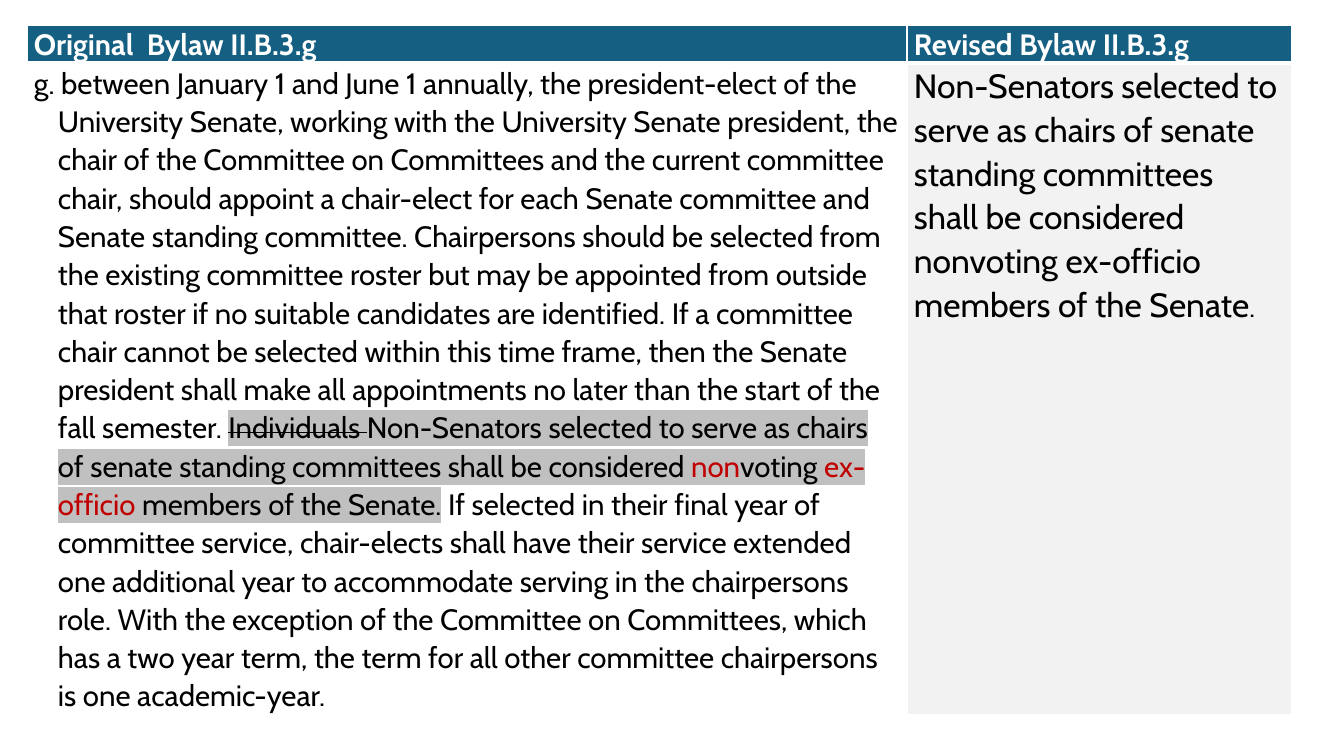
from dataclasses import dataclass

from lxml.etree import SubElement
from pptx import Presentation
from pptx.dml.color import RGBColor as RGB
from pptx.oxml.ns import qn
from pptx.util import Pt

HEADINGS = ["Original  Bylaw II.B.3.g", "Revised Bylaw II.B.3.g"]

# Each run: wording, then its own formatting
ORIGINAL_BYLAW = [
    ("g. between January 1 and June 1 annually, the president-elect of the University Senate, "
     "working with the University Senate president, the chair of the Committee on Committees "
     "and the current committee chair, should appoint a chair-elect for each Senate committee "
     "and Senate standing committee. Chairpersons should be selected from the existing committee "
     "roster but may be appointed from outside that roster if no suitable candidates are "
     "identified. If a committee chair cannot be selected within this time frame, then the "
     "Senate president shall make all appointments no later than the start of the fall "
     "semester. ", {}),
    ("Individuals ", {"marked": True, "struck": True}),
    ("Non-Senators selected to serve as chairs of senate standing committees shall be "
     "considered ", {"marked": True}),
    ("non", {"marked": True, "changed": True}),
    ("voting ", {"marked": True}),
    ("ex-officio", {"marked": True, "changed": True}),
    (" members of the Senate.", {"marked": True}),
    (" If selected in their final year of committee service, chair-elects shall have their "
     "service extended one additional year to accommodate serving in the chairpersons role. "
     "With the exception of the Committee on Committees, which has a two year term, the term "
     "for all other committee chairpersons is one academic-year.", {}),
]
REVISED_BYLAW = [
    ("Non-Senators selected to serve as chairs of senate standing committees shall be "
     "considered nonvoting ex-officio members of the Senate", {}),
    (".", {"size": 20}),
]


@dataclass(frozen=True)
class Theme:
    font: str = "Cabin"
    text_size: int = 21
    revised_size: int = 24
    line_spacing: float = 1.07
    header: str = "156082"
    revised: str = "F2F2F2"
    white: str = "FFFFFF"
    black: str = "000000"
    changed: str = "C00000"
    marked: str = "C0C0C0"


THEME = Theme()
PX = 9071  # EMU in one px
SLIDE_SIZE = (1344, 756)
TABLE_LEFT, TABLE_TOP = 27, 25
COLUMN_WIDTHS = [880, 385]
ROW_HEIGHTS = [38, 651]
SIDE_MARGIN = 7
HANGING_INDENT = 24


def px(length):
    return length * PX


def add_color(parent, color):
    SubElement(parent, qn("a:srgbClr"), val=color)


def set_borders(cell, bottom_width):
    properties = cell._tc.get_or_add_tcPr()
    for side, width in (("L", 1), ("R", 1), ("T", 1), ("B", bottom_width)):
        line = SubElement(properties, qn(f"a:ln{side}"), w=str(Pt(width)))
        add_color(SubElement(line, qn("a:solidFill")), THEME.white)


def add_run(paragraph, wording, color, marked=False, struck=False, changed=False, size=None):
    run = paragraph.add_run()
    run.text = wording
    run.font.color.rgb = RGB.from_string(THEME.changed if changed else color)
    if size:
        run.font.size = Pt(size)
    properties = run._r.get_or_add_rPr()
    if struck:
        properties.set("strike", "sngStrike")
    if marked:
        add_color(SubElement(properties, qn("a:highlight")), THEME.marked)


def fill_cell(cell, runs, size, color, background=None, bold=False, bottom_width=1):
    cell.margin_left = cell.margin_right = px(SIDE_MARGIN)
    cell.margin_top = cell.margin_bottom = 0
    set_borders(cell, bottom_width)
    if background:
        cell.fill.solid()
        cell.fill.fore_color.rgb = RGB.from_string(background)
    else:
        cell.fill.background()
    paragraph = cell.text_frame.paragraphs[0]
    paragraph.line_spacing = THEME.line_spacing
    paragraph.font.name = THEME.font
    paragraph.font.size = Pt(size)
    paragraph.font.bold = bold
    for wording, formatting in runs:
        add_run(paragraph, wording, color, **formatting)
    return paragraph


def main():
    deck = Presentation()
    deck.slide_width, deck.slide_height = map(px, SLIDE_SIZE)
    slide = deck.slides.add_slide(deck.slide_layouts[6])
    bylaws = slide.shapes.add_table(
        len(ROW_HEIGHTS), len(COLUMN_WIDTHS), px(TABLE_LEFT), px(TABLE_TOP),
        px(sum(COLUMN_WIDTHS)), px(sum(ROW_HEIGHTS))).table
    bylaws.horz_banding = False
    for column, width in zip(bylaws.columns, COLUMN_WIDTHS):
        column.width = px(width)
    for row, height in zip(bylaws.rows, ROW_HEIGHTS):
        row.height = px(height)

    for index, heading in enumerate(HEADINGS):
        fill_cell(bylaws.cell(0, index), [(heading, {})], THEME.text_size, THEME.white,
                  THEME.header, bold=True, bottom_width=3)
    original = fill_cell(bylaws.cell(1, 0), ORIGINAL_BYLAW, THEME.text_size, THEME.black)
    indents = original._p.get_or_add_pPr()
    indents.set("marL", str(px(HANGING_INDENT)))
    indents.set("indent", str(-px(HANGING_INDENT)))
    fill_cell(bylaws.cell(1, 1), REVISED_BYLAW, THEME.revised_size, THEME.black, THEME.revised)

    deck.save("out.pptx")


if __name__ == "__main__":
    main()
